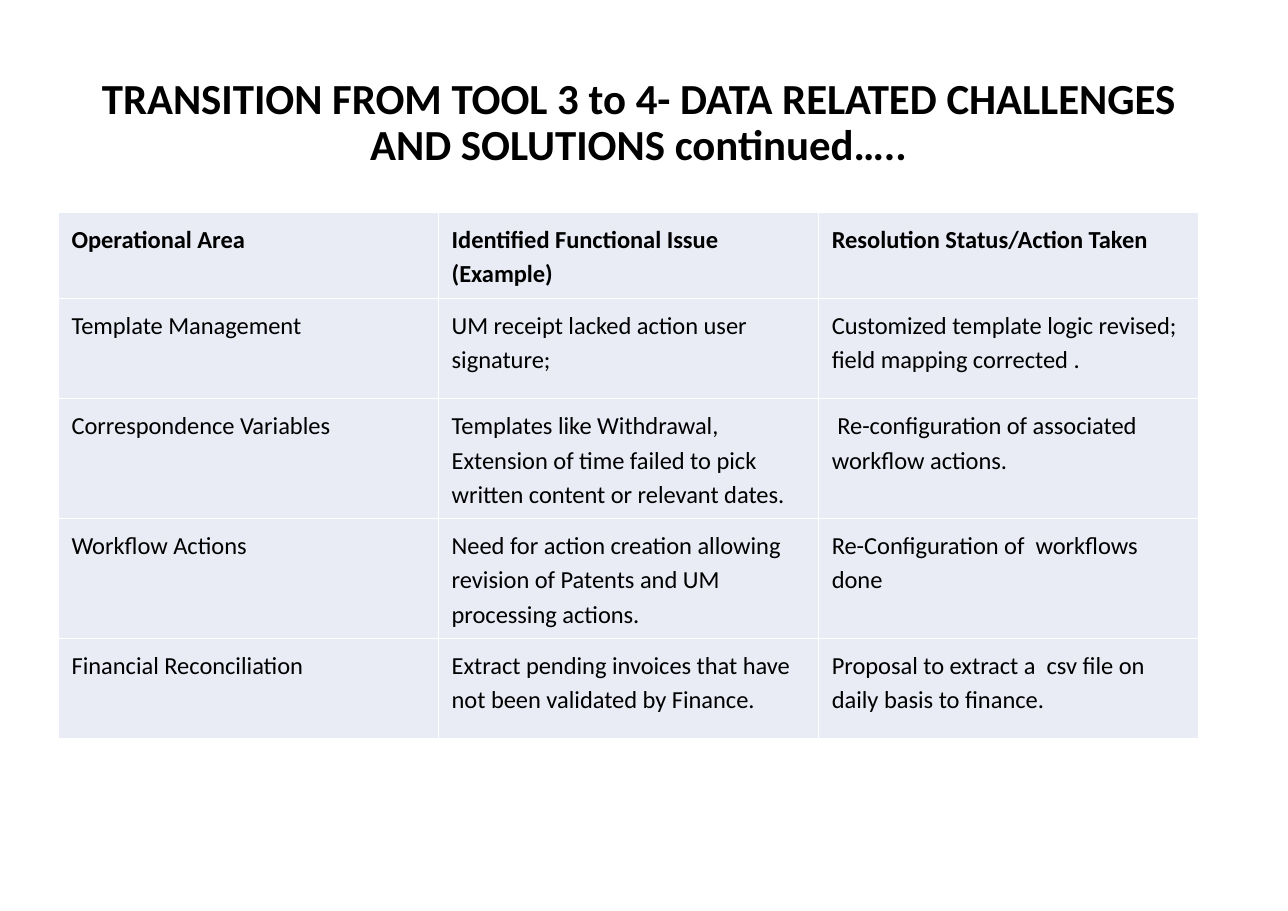
import dataclasses

import pptx
import pptx.dml.color
import pptx.enum.text
import pptx.oxml
import pptx.oxml.ns
import pptx.util
from pptx.util import Inches


@dataclasses.dataclass(frozen=True)
class Theme:
    """Colours, font and type sizes of the slide."""
    font: str = "Calibri"
    ink: str = "000000"
    cell: str = "E9EBF5"
    border: str = "FFFFFF"
    title_size: int = 28
    table_size: int = 16
    border_width: int = 1


THEME = Theme()
TITLE = "TRANSITION FROM TOOL 3 to 4- DATA RELATED CHALLENGES AND SOLUTIONS continued….."
ROWS = [
    ("Operational Area", "Identified Functional Issue (Example)", "Resolution Status/Action Taken"),
    ("Template Management", "UM receipt lacked action user signature;",
     "Customized template logic revised; field mapping corrected ."),
    ("Correspondence Variables",
     "Templates like Withdrawal, Extension of time failed to pick written content or relevant dates.",
     " Re-configuration of associated workflow actions."),
    ("Workflow Actions",
     "Need for action creation allowing revision of Patents and UM processing actions.",
     "Re-Configuration of  workflows done"),
    ("Financial Reconciliation", "Extract pending invoices that have not been validated by Finance.",
     "Proposal to extract a  csv file on daily basis to finance."),
]
HEADER_HEIGHT = 0.58
BODY_HEIGHT = 0.91
COLUMN_WIDTH = 3.45


def format_paragraph(paragraph, size, bold, line_spacing):
    """Set the line spacing of a paragraph and the font of its runs."""
    paragraph.line_spacing = line_spacing
    for run in paragraph.runs:
        run.font.name = THEME.font
        run.font.size = pptx.util.Pt(size)
        run.font.bold = bold
        run.font.color.rgb = pptx.dml.color.RGBColor.from_string(THEME.ink)


def set_title(slide):
    """Place and format the slide title."""
    title = slide.shapes.title
    title.left, title.top = Inches(0.7), Inches(0.65)
    title.width, title.height = Inches(10.19), Inches(0.8)
    frame = title.text_frame
    frame.text = TITLE
    frame.word_wrap = True
    frame.auto_size = pptx.enum.text.MSO_AUTO_SIZE.NONE
    frame.vertical_anchor = pptx.enum.text.MSO_ANCHOR.TOP
    paragraph = frame.paragraphs[0]
    paragraph.alignment = pptx.enum.text.PP_ALIGN.CENTER
    format_paragraph(paragraph, THEME.title_size, True, 0.9)


def add_borders(cell):
    """Draw a thin line on all four sides of a cell."""
    properties = cell._tc.get_or_add_tcPr()
    width = pptx.util.Pt(THEME.border_width)
    for position, side in enumerate(("lnL", "lnR", "lnT", "lnB")):
        line = pptx.oxml.parse_xml(
            f'<a:{side} {pptx.oxml.ns.nsdecls("a")} w="{width}"><a:solidFill>'
            f'<a:srgbClr val="{THEME.border}"/></a:solidFill></a:{side}>')
        properties.insert(position, line)


def fill_cell(cell, text, bold):
    """Write and format one table cell."""
    cell.margin_left = cell.margin_right = Inches(0.12)
    cell.margin_top = cell.margin_bottom = Inches(0.08)
    cell.fill.solid()
    cell.fill.fore_color.rgb = pptx.dml.color.RGBColor.from_string(THEME.cell)
    cell.text_frame.text = text
    format_paragraph(cell.text_frame.paragraphs[0], THEME.table_size, bold, 1.14)
    add_borders(cell)


def add_issue_table(slide):
    """Add the table of issues and their resolutions."""
    column_count = len(ROWS[0])
    height = HEADER_HEIGHT + BODY_HEIGHT * (len(ROWS) - 1)
    table = slide.shapes.add_table(
        len(ROWS), column_count, Inches(0.53), Inches(1.93),
        Inches(COLUMN_WIDTH * column_count), Inches(height)).table
    table.horz_banding = False
    for column in table.columns:
        column.width = Inches(COLUMN_WIDTH)
    for row_index, texts in enumerate(ROWS):
        is_header = row_index == 0
        table.rows[row_index].height = Inches(HEADER_HEIGHT if is_header else BODY_HEIGHT)
        for column_index, text in enumerate(texts):
            fill_cell(table.cell(row_index, column_index), text, is_header)


def main():
    """Build the slide and save the presentation."""
    presentation = pptx.Presentation()
    presentation.slide_width = Inches(11.69)
    presentation.slide_height = Inches(8.27)
    slide = presentation.slides.add_slide(presentation.slide_layouts.get_by_name("Title Only"))
    set_title(slide)
    add_issue_table(slide)
    presentation.save("out.pptx")


if __name__ == "__main__":
    main()
